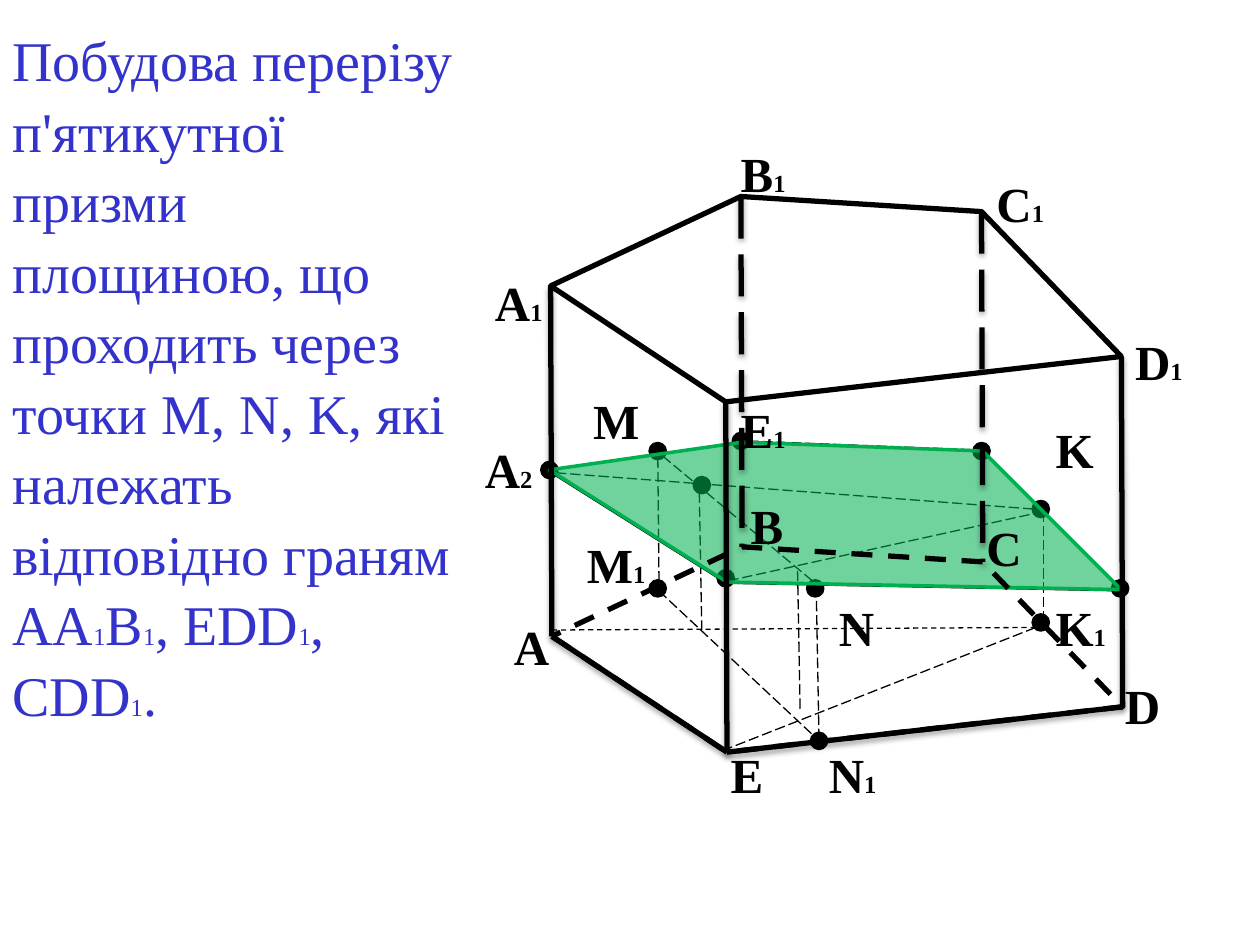
from typing import NamedTuple

from lxml import etree
from pptx import Presentation
from pptx.dml.color import RGBColor
from pptx.enum.dml import MSO_LINE as Dash
from pptx.enum.shapes import MSO_CONNECTOR as Connector, MSO_SHAPE as Preset
from pptx.enum.text import MSO_ANCHOR as Anchor
from pptx.oxml.ns import qn
from pptx.util import Inches, Pt

BLACK, GREEN, TITLE_BLUE = "000000", "00B050", "3333CC"
DOT = 0.12


class Point(NamedTuple):
    x: float
    y: float


class Segment(NamedTuple):
    start: Point
    end: Point
    dash: Dash = Dash.LONG_DASH


class Label(NamedTuple):
    text: str
    left: float
    top: float
    width: float


def segment(x1: float, y1: float, x2: float, y2: float, dash=Dash.LONG_DASH) -> Segment:
    return Segment(Point(x1, y1), Point(x2, y2), dash)


def rgb(value: str) -> RGBColor:
    return RGBColor.from_string(value)


def set_alpha(color_parent, percent: int) -> None:
    color = next(color_parent.iter(qn("a:srgbClr")))
    etree.SubElement(color, qn("a:alpha"), val=str(percent * 1000))


def style_line(line, color: str, width: float, dash=None) -> None:
    line.color.rgb = rgb(color)
    line.width = Pt(width)
    if dash is not None:
        line.dash_style = dash


def draw_segment(shapes, edge: Segment, width: float = 0.75, shadow: bool = False) -> None:
    ends = [Inches(value) for point in (edge.start, edge.end) for value in point]
    connector = shapes.add_connector(Connector.STRAIGHT, *ends)
    style_line(connector.line, BLACK, width, edge.dash)
    effects = etree.SubElement(connector._element.spPr, qn("a:effectLst"))
    if shadow:
        outer = etree.SubElement(effects, qn("a:outerShdw"), blurRad=str(Pt(3.1)),
                                 dist=str(Pt(1.8)), dir="5400000", rotWithShape="0")
        etree.SubElement(outer, qn("a:srgbClr"), val=BLACK)
        set_alpha(outer, 35)


def draw_dot(shapes, left: float, top: float) -> None:
    dot = shapes.add_shape(Preset.OVAL, Inches(left), Inches(top), Inches(DOT), Inches(DOT))
    dot.shadow.inherit = False
    dot.fill.solid()
    dot.fill.fore_color.rgb = rgb(BLACK)
    style_line(dot.line, BLACK, 2)


def draw_polygon(shapes, corners: list[Point], color: str, width: float,
                 dash=None, opacity: int = 0) -> None:
    first, *rest = [(Inches(x), Inches(y)) for x, y in corners]
    builder = shapes.build_freeform(*first)
    builder.add_line_segments(rest, close=True)
    polygon = builder.convert_to_shape()
    polygon.shadow.inherit = False
    style_line(polygon.line, color, width, dash)
    if opacity:
        polygon.fill.solid()
        polygon.fill.fore_color.rgb = rgb(color)
        set_alpha(polygon._element.spPr.find(qn("a:solidFill")), opacity)
    else:
        polygon.fill.background()


def add_text(shapes, text: str, left: float, top: float, width: float, height: float, *,
             size: float, color: str = BLACK, bold: bool = False, wrap: bool = False,
             anchor=Anchor.TOP, spacing: float = 1.0) -> None:
    """Write text; the digit after each underscore is a small index."""
    box = shapes.add_textbox(Inches(left), Inches(top), Inches(width), Inches(height))
    frame = box.text_frame
    frame.word_wrap = wrap
    frame.vertical_anchor = anchor
    paragraph = frame.paragraphs[0]
    paragraph.line_spacing = spacing
    head, *indexed = text.split("_")
    runs = [(head, size)]
    for part in indexed:
        runs += [(part[0], 14), (part[1:], size)]
    for content, run_size in runs:
        if content:
            run = paragraph.add_run()
            run.text = content
            run.font.name = "Times New Roman"
            run.font.size = Pt(run_size)
            run.font.bold = bold
            run.font.color.rgb = rgb(color)


TITLE = ("Побудова перерізу п'ятикутної призми площиною, що проходить через точки "
         "M, N, K, які належать відповідно граням АА_1В_1, ЕDD_1, CDD_1.")

# Prism corners in the order A, E, D, C, B
BASE = [Point(4.38, 5.05), Point(5.77, 5.97), Point(8.91, 5.61),
        Point(7.8, 4.46), Point(5.89, 4.34)]
TOP = [Point(x - 0.01, y - 2.78) for x, y in BASE]
SECTION = [Point(4.36, 3.73), Point(5.77, 4.62), Point(8.9, 4.68),
           Point(7.8, 3.58), Point(5.89, 3.51)]
HIDDEN_CORNERS = (3, 4)

SECTION_DOTS = [(4.3, 3.67), (5.7, 4.53), (5.51, 3.79), (8.2, 3.98), (6.41, 4.61),
                (5.16, 3.52), (7.73, 3.52), (5.82, 3.44), (8.83, 4.61)]
BASE_DOTS = [(8.2, 4.88), (6.44, 5.82), (5.16, 4.61)]

SECTION_LINES = [
    segment(8.28, 4.06, 8.28, 4.92), segment(5.26, 3.62, 6.52, 4.67),
    segment(5.22, 3.52, 5.23, 4.61), segment(5.55, 3.91, 5.57, 5),
    segment(8.28, 4.06, 5.78, 4.61), segment(6.33, 4.53, 6.35, 5.63),
    segment(8.2, 4.04, 4.38, 3.75), segment(4.4, 3.77, 5.7, 4.59, None),
    segment(5.8, 4.63, 8.91, 4.69, None), segment(8.91, 4.69, 7.81, 3.59),
    segment(4.36, 3.73, 5.86, 3.52), segment(5.94, 3.5, 7.73, 3.57),
]
BASE_LINES = [
    segment(6.48, 4.77, 6.5, 5.86), segment(5.23, 4.69, 6.48, 5.86),
    segment(8.22, 4.98, 4.38, 5, Dash.DASH), segment(8.22, 4.98, 5.78, 5.94),
]

LABELS = [
    Label("A", 3.98, 4.84, 0.49), Label("C", 7.73, 4.06, 0.49),
    Label("B", 5.86, 3.88, 0.46), Label("M", 4.61, 3.05, 0.57),
    Label("D", 8.83, 5.31, 0.49), Label("E", 5.7, 5.86, 0.46),
    Label("A_1", 3.83, 2.11, 0.58), Label("C_1", 7.81, 1.33, 0.58),
    Label("B_1", 5.78, 1.09, 0.56), Label("D_1", 8.91, 2.58, 0.58),
    Label("E_1", 5.78, 3.12, 0.56), Label("K", 8.28, 3.28, 0.51),
    Label("N", 6.56, 4.69, 0.49), Label("M_1", 4.56, 4.19, 0.67),
    Label("N_1", 6.48, 5.86, 0.58), Label("K_1", 8.28, 4.69, 0.61),
    Label("A_2", 3.75, 3.44, 0.58),
]


def draw_prism(shapes) -> None:
    draw_polygon(shapes, BASE, BLACK, 3, Dash.DASH)
    draw_polygon(shapes, TOP, BLACK, 3)
    for start, end in zip(BASE[:2], BASE[1:3]):
        draw_segment(shapes, Segment(start, end, None), 3, shadow=True)
    for corner, (upper, lower) in enumerate(zip(TOP, BASE)):
        dash = Dash.LONG_DASH if corner in HIDDEN_CORNERS else None
        draw_segment(shapes, Segment(upper, lower, dash), 3, shadow=True)


def main() -> None:
    deck = Presentation()
    deck.slide_width, deck.slide_height = Inches(10), Inches(7.5)
    shapes = deck.slides.add_slide(deck.slide_layouts[6]).shapes

    # Cutting plane with its points and construction lines
    for dot in SECTION_DOTS:
        draw_dot(shapes, *dot)
    for edge in SECTION_LINES:
        draw_segment(shapes, edge)
    draw_polygon(shapes, SECTION, GREEN, 2, opacity=56)

    # Problem statement
    add_text(shapes, TITLE, 0, 0.23, 3.83, 5.49, size=32, color=TITLE_BLUE,
             wrap=True, anchor=Anchor.MIDDLE, spacing=1.05)

    # Prism
    draw_prism(shapes.add_group_shape().shapes)

    # Projections onto the base
    for dot in BASE_DOTS:
        draw_dot(shapes, *dot)
    for edge in BASE_LINES:
        draw_segment(shapes, edge)

    # Point names
    for label in LABELS:
        add_text(shapes, label.text, label.left, label.top, label.width, 0.57,
                 size=28, bold=True)

    deck.save("out.pptx")


if __name__ == "__main__":
    main()
